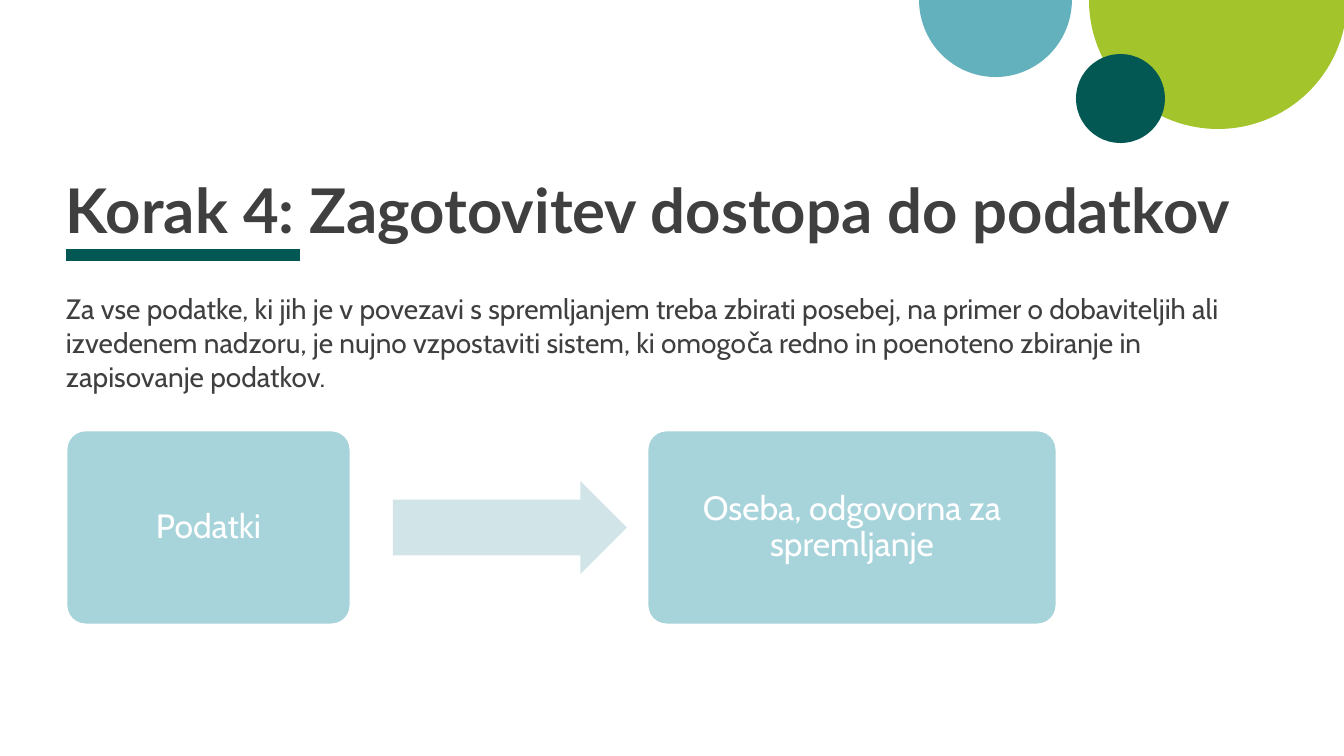
from dataclasses import dataclass

from lxml import etree
from pptx import Presentation
from pptx.dml.color import RGBColor
from pptx.enum.shapes import MSO_CONNECTOR, MSO_SHAPE as Shape
from pptx.enum.text import MSO_ANCHOR as Anchor, PP_ALIGN as Align
from pptx.oxml.ns import qn
from pptx.util import Pt

EMU_PER_PX = 914400 / 100.8


@dataclass(frozen=True)
class Theme:
    ink: str = "3F3F3F"
    white: str = "FFFFFF"
    dark_teal: str = "035854"
    lime: str = "A3C42A"
    blue: str = "64B1BE"
    box: str = "A7D3DA"
    arrow: str = "D1E5E9"
    title_font: str = "Lato"
    body_font: str = "Cabin"
    title_size: int = 44
    body_size: int = 20
    box_size: int = 24


def px(*lengths):
    """Turn whole pixels into EMU."""
    return [round(n * EMU_PER_PX) for n in lengths]


class SlideBuilder:
    def __init__(self, prs, theme):
        self.theme = theme
        self.s = prs.slides.add_slide(prs.slide_layouts[6])

    def fill_text(self, tf, text, font, size, color, bold=False, align=Align.LEFT,
                  anchor=Anchor.TOP, spacing=None, inset=0):
        tf.word_wrap = True
        tf.vertical_anchor = anchor
        tf.margin_left, tf.margin_right, tf.margin_top, tf.margin_bottom = px(inset) * 4
        tf.text = text
        p = tf.paragraphs[0]
        p.alignment = align
        p.line_spacing = spacing
        for r in p.runs:
            r.font.name, r.font.size, r.font.bold = font, Pt(size), bold
            r.font.color.rgb = RGBColor.from_string(color)

    def text(self, rect, text, *style, **options):
        sp = self.s.shapes.add_textbox(*px(*rect))
        self.fill_text(sp.text_frame, text, *style, **options)

    def shape(self, kind, rect, fill, adjustments=()):
        sp = self.s.shapes.add_shape(kind, *px(*rect))
        sp.shadow.inherit = False
        sp.fill.solid()
        sp.fill.fore_color.rgb = RGBColor.from_string(fill)
        sp.line.fill.background()
        for i, value in enumerate(adjustments):
            sp.adjustments[i] = value
        return sp

    def half_disc(self, rect, fill):
        """Draw the lower half of a disc; pie angles are in 100000/60000 degrees."""
        self.shape(Shape.PIE, rect, fill, (0, 108))

    def box(self, rect, label):
        t = self.theme
        sp = self.shape(Shape.ROUNDED_RECTANGLE, rect, t.box, (0.1,))
        sp.line.color.rgb = RGBColor.from_string(t.white)
        sp.line.width = Pt(2)
        self.fill_text(sp.text_frame, label, t.body_font, t.box_size, t.white,
                       align=Align.CENTER, anchor=Anchor.MIDDLE, spacing=0.9, inset=15)

    def rule(self, x1, x2, y, color, width):
        line = self.s.shapes.add_connector(MSO_CONNECTOR.STRAIGHT, *px(x1, y, x2, y))
        line.line.color.rgb = RGBColor.from_string(color)
        line.line.width = Pt(width)
        etree.SubElement(line._element.spPr, qn("a:effectLst"))


def main():
    prs = Presentation()
    prs.slide_width, prs.slide_height = px(1344, 756)
    t = Theme()
    slide = SlideBuilder(prs, t)

    left, width = 66, 1219
    slide.rule(left, 300, 255, t.dark_teal, 8)
    slide.half_disc((1089, -129, 258, 258), t.lime)
    slide.half_disc((919, -78, 153, 155), t.blue)
    slide.shape(Shape.OVAL, (1076, 54, 89, 89), t.dark_teal)

    slide.text((left, 185, width, 60), "Korak 4: Zagotovitev dostopa do podatkov",
               t.title_font, t.title_size, t.ink, bold=True,
               anchor=Anchor.BOTTOM, spacing=0.8)
    slide.text((left, 292, width, 102),
               "Za vse podatke, ki jih je v povezavi s spremljanjem treba zbirati posebej, "
               "na primer o dobaviteljih ali izvedenem nadzoru, je nujno vzpostaviti sistem, "
               "ki omogoča redno in poenoteno zbiranje in zapisovanje podatkov.",
               t.body_font, t.body_size, t.ink)

    box_top, box_height = 430, 195
    slide.box((left, box_top, 285, box_height), "Podatki")
    slide.shape(Shape.RIGHT_ARROW, (393, 481, 234, 93), t.arrow, (0.6, 0.5))
    slide.box((647, box_top, 410, box_height), "Oseba, odgovorna za spremljanje")

    prs.save("out.pptx")


if __name__ == "__main__":
    main()
